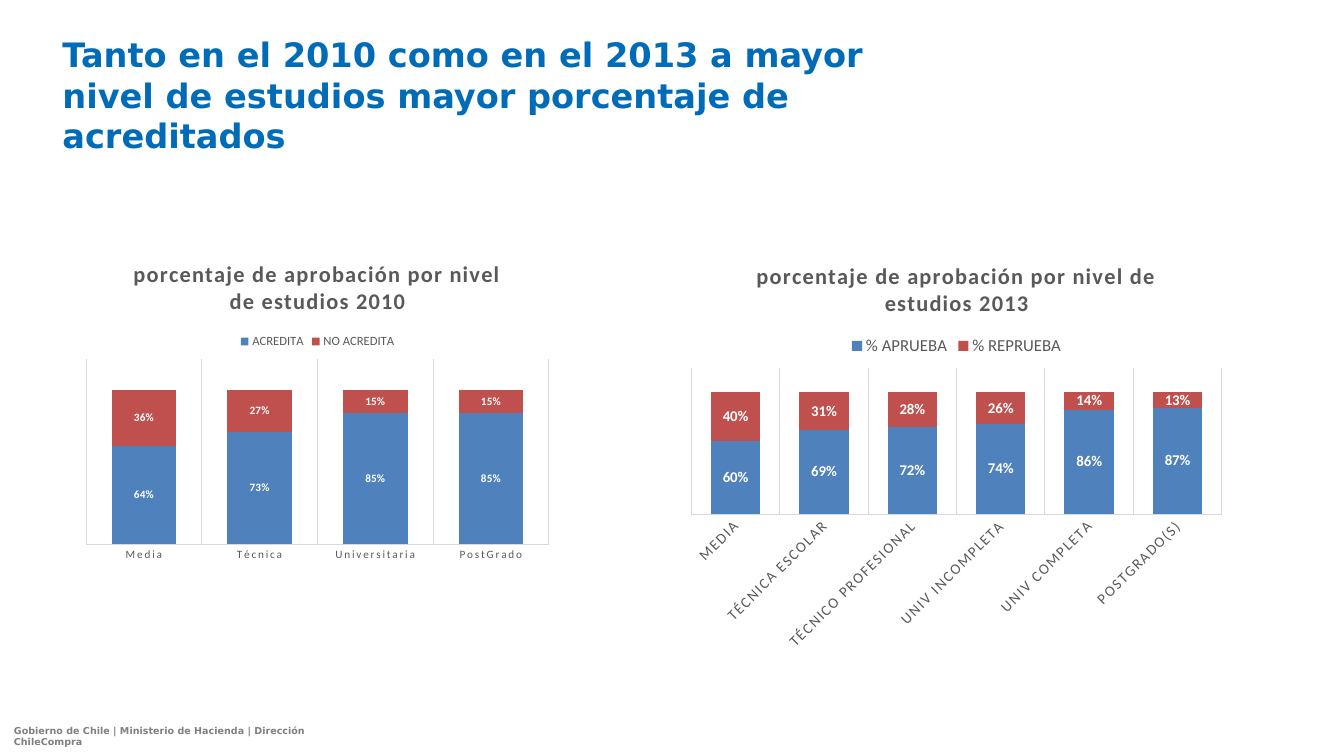
from pptx import Presentation
from pptx.chart.data import CategoryChartData
from pptx.dml.color import RGBColor
from pptx.enum.chart import XL_CHART_TYPE, XL_LEGEND_POSITION, XL_TICK_LABEL_POSITION, XL_TICK_MARK
from pptx.enum.text import MSO_ANCHOR
from pptx.util import Pt

BLUE = RGBColor(0x00, 0x6C, 0xB7)
FOOTER_GRAY = RGBColor(0x80, 0x80, 0x80)
TEXT_GRAY = RGBColor(0x59, 0x59, 0x59)
LINE_GRAY = RGBColor(0xD9, 0xD9, 0xD9)
WHITE = RGBColor(0xFF, 0xFF, 0xFF)
BLACK = RGBColor(0, 0, 0)
PASS_BLUE = RGBColor(0x4F, 0x81, 0xBD)
FAIL_RED = RGBColor(0xC0, 0x50, 0x4D)


def set_font(font, size, color, name="Calibri", bold=False):
    for key, value in {"size": Pt(size), "name": name, "bold": bold}.items():
        setattr(font, key, value)
    font.color.rgb = color


def set_line(line):
    line.color.rgb = LINE_GRAY
    line.width = Pt(0.75)


def add_text(page, box, text, size, color, wrap):
    area = page.shapes.add_textbox(*map(Pt, box)).text_frame
    area.word_wrap = wrap
    area.vertical_anchor = MSO_ANCHOR.TOP
    span = area.paragraphs[0].add_run()
    span.text = text
    set_font(span.font, size, color, "DejaVu Sans", True)


def add_approval_chart(page, box, title, categories, series, sizes, angle):
    data = CategoryChartData(number_format="0%")
    data.categories = categories
    for name, values in series.items():
        data.add_series(name, values)
    chart = page.shapes.add_chart(XL_CHART_TYPE.COLUMN_STACKED, *map(Pt, box), data).chart
    set_font(chart.font, 10, BLACK)

    # Title
    para = chart.chart_title.text_frame.paragraphs[0]
    span = para.add_run()
    span.text = title
    set_font(span.font, 16, TEXT_GRAY, bold=True)
    span.font._element.set("spc", "100")
    chart.chart_title.include_in_layout = False

    # Legend
    chart.has_legend = True
    chart.legend.position = XL_LEGEND_POSITION.TOP
    chart.legend.include_in_layout = False
    set_font(chart.legend.font, sizes["legend"], TEXT_GRAY)

    # Axes
    axis = chart.category_axis
    axis.major_tick_mark = axis.minor_tick_mark = XL_TICK_MARK.NONE
    axis.tick_label_position = XL_TICK_LABEL_POSITION.NEXT_TO_AXIS
    axis.has_major_gridlines = True
    set_line(axis.major_gridlines.format.line)
    set_line(axis.format.line)
    label_font = axis.tick_labels.font
    set_font(label_font, sizes["label"], TEXT_GRAY)
    label_font._element.set("spc", "120")
    axis._element.txPr.bodyPr.set("rot", str(angle * 60000))
    scale = chart.value_axis
    for key, value in {"minimum_scale": 0, "maximum_scale": 1.2,
                       "has_major_gridlines": False, "visible": False}.items():
        setattr(scale, key, value)

    # Columns and their values
    plot = chart.plots[0]
    for key, value in {"gap_width": 79, "overlap": 100, "vary_by_categories": False}.items():
        setattr(plot, key, value)
    for column, color in zip(plot.series, (PASS_BLUE, FAIL_RED)):
        column.format.fill.solid()
        column.format.fill.fore_color.rgb = color
        labels = column.data_labels
        for key, value in {"show_value": True, "number_format": "0%",
                           "number_format_is_linked": False}.items():
            setattr(labels, key, value)
        set_font(labels.font, sizes["label"], WHITE, bold=True)


def main():
    deck = Presentation()
    deck.slide_width, deck.slide_height = Pt(960), Pt(540)
    page = deck.slides.add_slide(deck.slide_layouts[6])

    add_text(page, (2.9, 514, 271.4, 15),
             "Gobierno de Chile | Ministerio de Hacienda | Dirección ChileCompra",
             6.8, FOOTER_GRAY, False)
    add_text(page, (37.5, 21, 617.8, 60),
             "Tanto en el 2010 como en el 2013 a mayor nivel de estudios mayor porcentaje de acreditados",
             24, BLUE, True)
    add_approval_chart(
        page, (54.7, 173.5, 344.2, 232.6),
        "porcentaje de aprobación por nivel de estudios 2010",
        ("Media", "Técnica", "Universitaria", "PostGrado"),
        {"ACREDITA": (0.64, 0.73, 0.85, 0.85), "NO ACREDITA": (0.36, 0.27, 0.15, 0.15)},
        {"legend": 9, "label": 8}, 0)
    add_approval_chart(
        page, (486, 173.5, 394.6, 297.4),
        "porcentaje de aprobación por nivel de estudios 2013",
        ("MEDIA", "TÉCNICA ESCOLAR", "TÉCNICO PROFESIONAL", "UNIV INCOMPLETA",
         "UNIV COMPLETA", "POSTGRADO(S)"),
        {"% APRUEBA": (0.6, 0.69, 0.72, 0.74, 0.86, 0.87),
         "% REPRUEBA": (0.4, 0.31, 0.28, 0.26, 0.14, 0.13)},
        {"legend": 12, "label": 10.6}, -45)

    deck.save("out.pptx")


if __name__ == "__main__":
    main()
